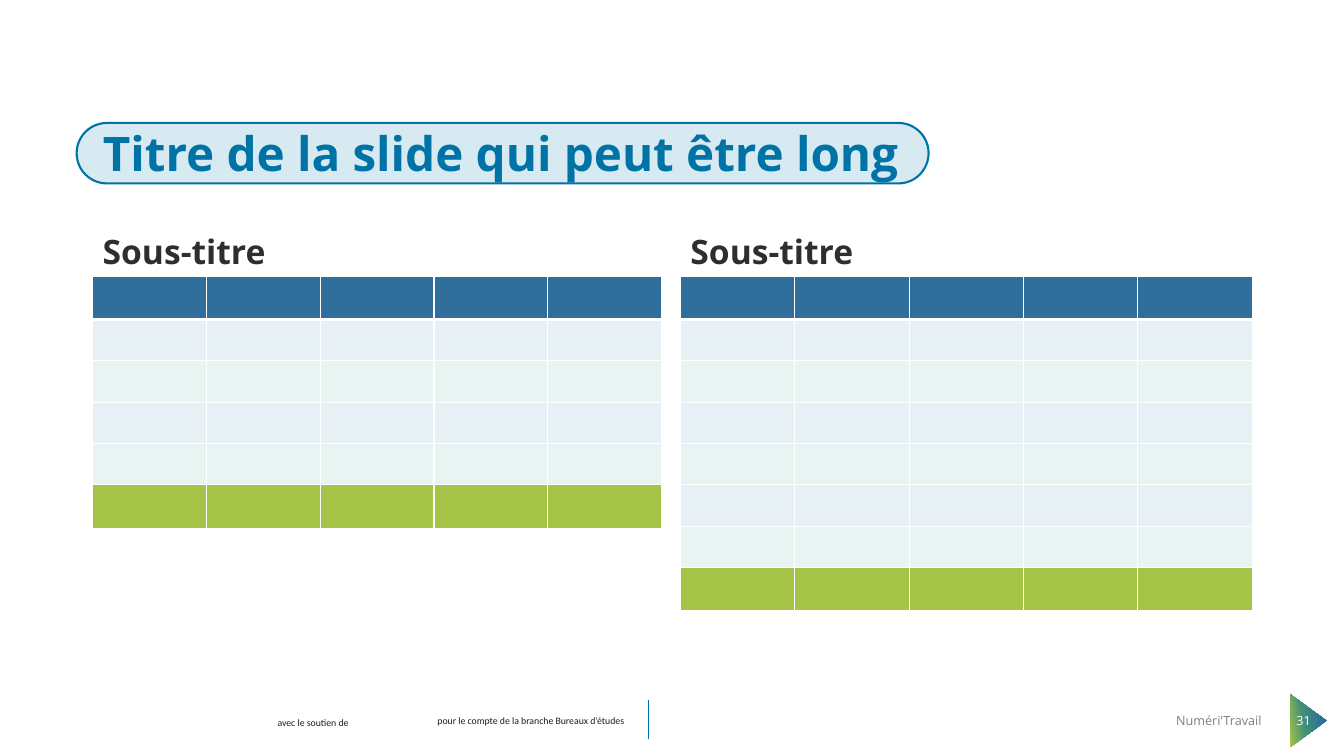
import pptx
import pptx.util
import pptx.dml.color
import pptx.enum.shapes
import pptx.enum.text
import pptx.oxml
import pptx.oxml.ns

Inches = pptx.util.Inches
Pt = pptx.util.Pt
Kind = pptx.enum.shapes.MSO_SHAPE
Align = pptx.enum.text.PP_ALIGN
Anchor = pptx.enum.text.MSO_ANCHOR

HUES = {
    "main": "0073A6", "pale": "D7EAF1", "dark": "2D2F2D", "ink": "1D1D1B",
    "grey": "7D7E7D", "white": "FFFFFF", "head": "306F9C", "teal": "419079",
    "odd": "E7F1F5", "even": "E8F4F1", "foot": "A6C448",
}
TITLE = "Titre de la slide qui peut être long"
PANELS = [("Sous-titre", 0.92, 5.64, 6), ("Sous-titre", 6.75, 5.67, 8)]
CREDITS = [
    ("avec le soutien de", 2.39, 7.06, 1.43),
    ("pour le compte de la branche Bureaux d’études", 3.65, 7.04, 3.23),
]
OWNER = "Numéri'Travail"
NUMBER = "31"
FADE = [(0, "foot"), (41, "teal"), (80, "head")]
COLS = 5
TOP = 2.74
TALL, ROW = 0.43, 0.41


def hue(name):
    return pptx.dml.color.RGBColor.from_string(HUES[name])


def write(shape, text, size, color, font="Open Sans", bold=False,
          align=Align.LEFT, anchor=Anchor.MIDDLE, space=1.0):
    frame = shape.text_frame
    frame.word_wrap = True
    frame.auto_size = pptx.enum.text.MSO_AUTO_SIZE.NONE
    frame.vertical_anchor = anchor
    para = frame.paragraphs[0]
    para.alignment = align
    para.line_spacing = space
    run = para.add_run()
    run.text = text
    run.font.name = font
    run.font.size = Pt(size)
    run.font.bold = bold
    run.font.color.rgb = hue(color)


def label(left, top, width, height, text, size, color, **style):
    box = slide.shapes.add_textbox(
        Inches(left), Inches(top), Inches(width), Inches(height))
    write(box, text, size, color, **style)


def border(cell, sides):
    props = cell._tc.get_or_add_tcPr()
    for spot, (side, width) in enumerate(sides):
        props.insert(spot, pptx.oxml.parse_xml(
            f'<a:ln{side} {pptx.oxml.ns.nsdecls("a")} w="{Pt(width)}"><a:solidFill>'
            f'<a:srgbClr val="{HUES["white"]}"/></a:solidFill></a:ln{side}>'))


def grid(left, width, count):
    fills = ["head"] + [("odd", "even")[i % 2] for i in range(count - 2)] + ["foot"]
    sizes = [TALL] + [ROW] * (count - 2) + [TALL]
    table = slide.shapes.add_table(
        count, COLS, Inches(left), Inches(TOP), Inches(width), Inches(sum(sizes))).table
    table.first_row = False
    table.horz_banding = False
    for col in table.columns:
        col.width = int(Inches(width) / COLS)
    for num, (row, fill, size) in enumerate(zip(table.rows, fills, sizes)):
        row.height = Inches(size)
        for cell in row.cells:
            cell.fill.solid()
            cell.fill.fore_color.rgb = hue(fill)
            border(cell, [("L", 1), ("R", 1),
                          ("T", 3 if num == 1 else 1), ("B", 3 if num == 0 else 1)])


deck = pptx.Presentation()
deck.slide_width = Inches(13.33)
deck.slide_height = Inches(7.5)
slide = deck.slides.add_slide(deck.slide_layouts[5])

arrow = slide.shapes.add_shape(
    Kind.ISOSCELES_TRIANGLE, Inches(12.71), Inches(6.97), Inches(0.53), Inches(0.36))
arrow.rotation = 90
arrow.shadow.inherit = False
arrow.line.fill.background()
stops = "".join(f'<a:gs pos="{pos * 1000}"><a:srgbClr val="{HUES[name]}"/></a:gs>'
                for pos, name in FADE)
arrow._element.spPr.find(pptx.oxml.ns.qn("a:prstGeom")).addnext(pptx.oxml.parse_xml(
    f'<a:gradFill {pptx.oxml.ns.nsdecls("a")} rotWithShape="1"><a:gsLst>{stops}</a:gsLst>'
    f'<a:lin ang="{260 * 60000}" scaled="0"/></a:gradFill>'))

rule = slide.shapes.add_connector(
    pptx.enum.shapes.MSO_CONNECTOR.STRAIGHT,
    Inches(6.43), Inches(7.33), Inches(6.43), Inches(6.94))
rule.line.color.rgb = hue("main")
rule.line.width = Pt(0.5)
rule._element.spPr.append(pptx.oxml.parse_xml(
    f'<a:effectLst {pptx.oxml.ns.nsdecls("a")}/>'))

for text, left, top, width in CREDITS:
    label(left, top, width, 0.22, text, 7, "ink", font="Calibri",
          align=Align.CENTER, anchor=Anchor.TOP)

pill = slide.shapes.add_shape(
    Kind.ROUNDED_RECTANGLE, Inches(0.76), Inches(1.22), Inches(8.45), Inches(0.6))
pill.adjustments[0] = 0.5
pill.shadow.inherit = False
pill.fill.solid()
pill.fill.fore_color.rgb = hue("pale")
pill.line.color.rgb = hue("main")
pill.line.width = Pt(1.5)

title = slide.shapes.title
title.left, title.top = Inches(0.92), Inches(0.4)
title.width, title.height = Inches(11.5), Inches(1.45)
write(title, TITLE, 34, "main", bold=True, anchor=Anchor.BOTTOM, space=0.9)
pill._element.addnext(title._element)

for text, left, width, count in PANELS:
    label(left, 1.84, width, 0.9, text, 24, "dark", bold=True,
          anchor=Anchor.BOTTOM, space=1.14)
    grid(left, width, count)

label(9.01, 6.95, 3.6, 0.4, OWNER, 9, "grey", align=Align.RIGHT)
label(12.61, 6.95, 0.64, 0.4, NUMBER, 9, "white", align=Align.CENTER)

deck.save("out.pptx")
